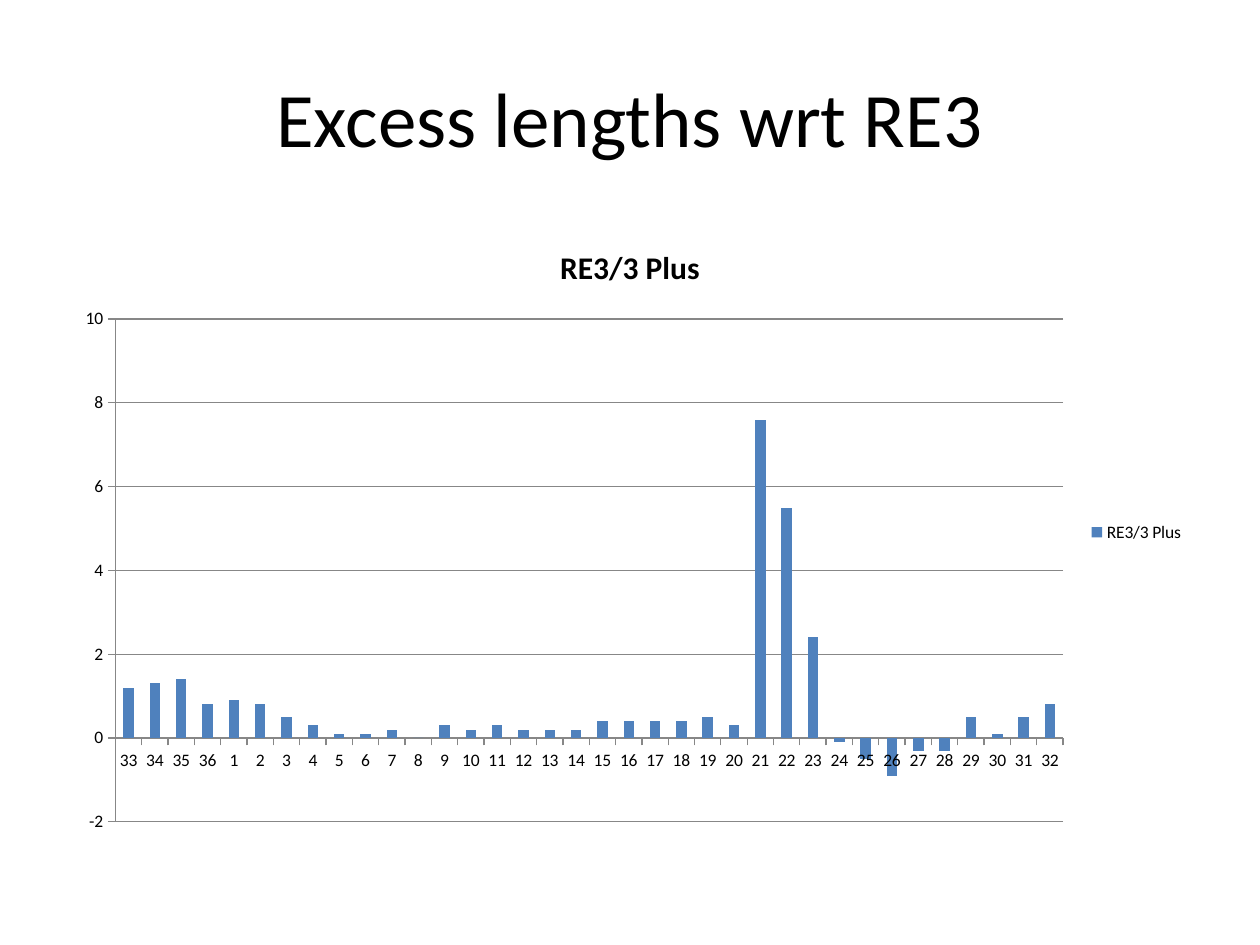
from pptx import Presentation
from pptx.chart.data import CategoryChartData
from pptx.dml.color import RGBColor
from pptx.enum.chart import XL_CHART_TYPE, XL_LEGEND_POSITION, XL_TICK_MARK
from pptx.enum.text import MSO_ANCHOR, PP_ALIGN
from pptx.util import Inches, Pt

BLACK = RGBColor(0x00, 0x00, 0x00)
BLUE = RGBColor(0x4F, 0x81, 0xBD)
GRAY = RGBColor(0x87, 0x87, 0x87)

SERIES_NAME = "RE3/3 Plus"
# Positions run round the ring of 36, starting at 33
POSITIONS = [*range(33, 37), *range(1, 33)]
EXCESS_LENGTHS = [
    1.2, 1.3, 1.4, 0.8, 0.9, 0.8, 0.5, 0.3, 0.1, 0.1, 0.2, 0,
    0.3, 0.2, 0.3, 0.2, 0.2, 0.2, 0.4, 0.4, 0.4, 0.4, 0.5, 0.3,
    7.6, 5.5, 2.4, -0.1, -0.5, -0.9, -0.3, -0.3, 0.5, 0.1, 0.5, 0.8,
]


class SlideBuilder:
    """Holds the style and the current slide; boxes are shares of its size."""

    font_name = "Calibri"

    def __init__(self, presentation):
        self.width = presentation.slide_width
        self.height = presentation.slide_height
        self.slide = presentation.slides.add_slide(presentation.slide_layouts[6])

    def box(self, left, top, width, height):
        return (round(left * self.width), round(top * self.height),
                round(width * self.width), round(height * self.height))

    def style(self, font, size, bold=False):
        font.name = self.font_name
        font.size = Pt(size)
        font.bold = bold
        font.color.rgb = BLACK

    def heading(self, text, *shares):
        frame = self.slide.shapes.add_textbox(*self.box(*shares)).text_frame
        frame.word_wrap = True
        frame.vertical_anchor = MSO_ANCHOR.MIDDLE
        frame.text = text
        paragraph = frame.paragraphs[0]
        paragraph.alignment = PP_ALIGN.CENTER
        self.style(paragraph.runs[0].font, 44)

    def column_chart(self, name, categories, values, *shares):
        data = CategoryChartData()
        data.categories = [str(category) for category in categories]
        data.add_series(name, values)
        chart = self.slide.shapes.add_chart(
            XL_CHART_TYPE.COLUMN_CLUSTERED, *self.box(*shares), data).chart
        self.style(chart.font, 10)

        # Title and legend
        chart.has_title = True
        title = chart.chart_title.text_frame
        title.text = name
        self.style(title.paragraphs[0].runs[0].font, 18, bold=True)
        chart.has_legend = True
        chart.legend.position = XL_LEGEND_POSITION.RIGHT
        chart.legend.include_in_layout = False

        # Columns
        plot = chart.plots[0]
        plot.gap_width = 150
        plot.vary_by_categories = False
        columns = plot.series[0]
        columns.invert_if_negative = False
        columns.format.fill.solid()
        columns.format.fill.fore_color.rgb = BLUE

        # Axes and grid
        value_axis = chart.value_axis
        value_axis.minimum_scale, value_axis.maximum_scale = -2, 10
        value_axis.major_unit = 2
        value_axis.has_major_gridlines = True
        for axis in (chart.category_axis, value_axis):
            axis.major_tick_mark = XL_TICK_MARK.OUTSIDE
            axis.minor_tick_mark = XL_TICK_MARK.NONE
        for part in (chart.category_axis, value_axis, value_axis.major_gridlines):
            part.format.line.color.rgb = GRAY
            part.format.line.width = Pt(0.75)


def main():
    presentation = Presentation()
    presentation.slide_width = Inches(10)
    presentation.slide_height = Inches(7.5)
    builder = SlideBuilder(presentation)
    builder.heading("Excess lengths wrt RE3", 0.05, 0.04, 0.9, 1 / 6)
    builder.column_chart(SERIES_NAME, POSITIONS, EXCESS_LENGTHS,
                         0.05, 0.7 / 3, 0.9, 0.66)
    presentation.save("out.pptx")


if __name__ == "__main__":
    main()
